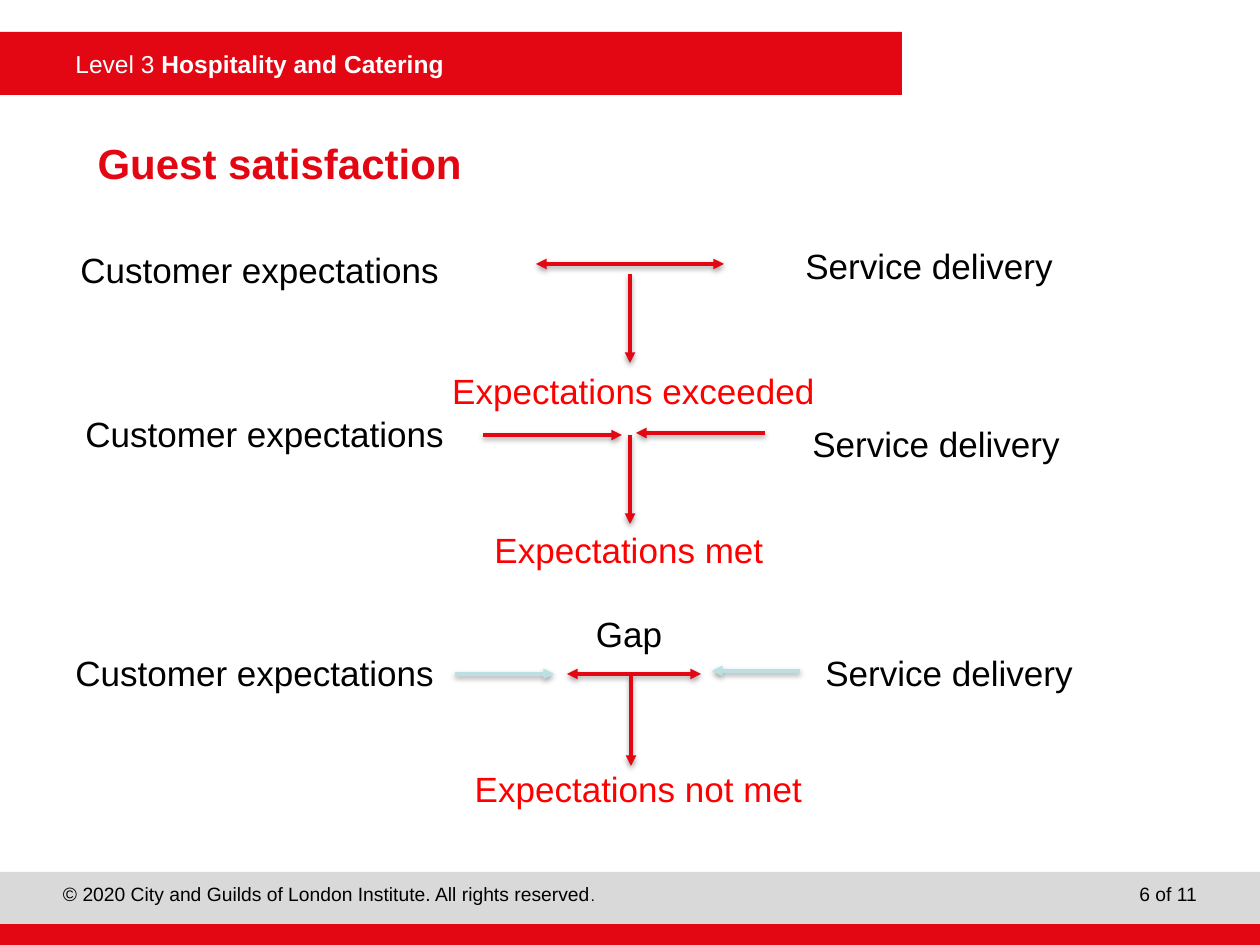
from lxml.etree import SubElement
from pptx import Presentation
from pptx.dml.color import RGBColor
from pptx.enum.shapes import MSO_CONNECTOR, MSO_SHAPE
from pptx.enum.text import MSO_ANCHOR, PP_ALIGN
from pptx.oxml.ns import qn
from pptx.util import Emu, Pt

PX = 914400 / 126
RED, BRIGHT, PALE, GREY = "E30613", "FF0000", "BBE0E3", "D9D9D9"
BLACK, WHITE = "000000", "FFFFFF"
LEFT, CENTER, RIGHT = PP_ALIGN.LEFT, PP_ALIGN.CENTER, PP_ALIGN.RIGHT

BANDS = [
    ((0, 32, 902, 63), RED),
    ((0, 872, 1260, 53), GREY),
    ((0, 924, 1260, 21), RED),
]

HEADER = [("Level 3 ", 14, WHITE, False), ("Hospitality and Catering", 14, WHITE, True)]
TITLE = [("Guest satisfaction", 24, RED, True)]
COPYRIGHT = [
    ("© 2020 City and Guilds of London Institute. All rights reserved", 11, BLACK, False),
    (".", 9, BLACK, False),
]
PAGE = [("6 of 11", 11, BLACK, False)]

LABELS = [
    ("Customer expectations", [(68, 242), (73, 406), (63, 645)], 387, BLACK, LEFT),
    ("Service delivery", [(793, 238), (800, 416), (813, 645)], 326, BLACK, LEFT),
    ("Expectations exceeded", [(426, 363)], 415, BRIGHT, CENTER),
    ("Expectations not met", [(431, 761)], 415, BRIGHT, CENTER),
]
MET_BOX = (442, 522, 374, 140)
MET = [("Expectations met", 20, BRIGHT, False)]
GAP = [("Gap", 20, BLACK, False)]

ARROWS = [
    ((536, 264), (724, 264), RED, True),
    ((630, 274), (630, 363), RED, False),
    ((483, 435), (622, 435), RED, False),
    ((765, 433), (636, 433), RED, False),
    ((630, 435), (630, 524), RED, False),
    ((567, 674), (701, 674), RED, True),
    ((800, 671), (712, 671), PALE, False),
    ((455, 674), (554, 674), PALE, False),
    ((631, 676), (631, 766), RED, False),
]


def px(values):
    return [Emu(round(v * PX)) for v in values]


def color(value):
    return RGBColor.from_string(value)


def add_runs(p, runs, align=LEFT):
    p.alignment = align
    for text, size, fill, bold in runs:
        r = p.add_run()
        r.text = text
        for name, value in {"name": "Arial", "size": Pt(size), "bold": bold}.items():
            setattr(r.font, name, value)
        r.font.color.rgb = color(fill)


def add_text(s, box, runs, align=LEFT, inset=True):
    tf = s.shapes.add_textbox(*px(box)).text_frame
    tf.word_wrap = True
    if not inset:
        for side in ("left", "top", "right", "bottom"):
            setattr(tf, f"margin_{side}", 0)
    add_runs(tf.paragraphs[0], runs, align)
    return tf


def add_band(s, box, fill):
    sp = s.shapes.add_shape(MSO_SHAPE.RECTANGLE, *px(box))
    sp.shadow.inherit = False
    sp.fill.solid()
    sp.fill.fore_color.rgb = color(fill)
    sp.line.fill.background()


def add_arrow(s, start, end, fill, double):
    c = s.shapes.add_connector(MSO_CONNECTOR.STRAIGHT, *px(start + end))
    c.line.width = Pt(2)
    c.line.color.rgb = color(fill)
    ln = c.line._get_or_add_ln()
    for tag in ["a:headEnd", "a:tailEnd"] if double else ["a:tailEnd"]:
        SubElement(ln, qn(tag), type="triangle")
    effects = SubElement(c._element.spPr, qn("a:effectLst"))
    shadow = SubElement(effects, qn("a:outerShdw"), blurRad="40000", dist="20000",
                        dir="5400000", rotWithShape="0")
    clr = SubElement(shadow, qn("a:srgbClr"), val=BLACK)
    SubElement(clr, qn("a:alpha"), val="38000")


def set_title(s):
    title = s.shapes.title
    for name, value in zip(("left", "top", "width", "height"), px((85, 136, 1133, 53))):
        setattr(title, name, value)
    tf = title.text_frame
    tf.vertical_anchor = MSO_ANCHOR.MIDDLE
    add_runs(tf.paragraphs[0], TITLE)


def main():
    prs = Presentation()
    prs.slide_width, prs.slide_height = px((1260, 945))
    s = prs.slides.add_slide(prs.slide_layouts[5])

    for box, fill in BANDS:
        add_band(s, box, fill)
    add_text(s, (63, 43, 839, 43), HEADER)
    add_text(s, (63, 882, 892, 32), COPYRIGHT, inset=False)
    add_text(s, (998, 882, 199, 32), PAGE, RIGHT, inset=False)
    set_title(s)

    for arrow in ARROWS:
        add_arrow(s, *arrow)
    for text, places, width, fill, align in LABELS:
        for left, top in places:
            add_text(s, (left, top, width, 55), [(text, 20, fill, False)], align)
    p = add_text(s, MET_BOX, MET, CENTER).add_paragraph()
    p.space_before = Pt(24)
    add_runs(p, GAP, CENTER)

    prs.save("out.pptx")


if __name__ == "__main__":
    main()
